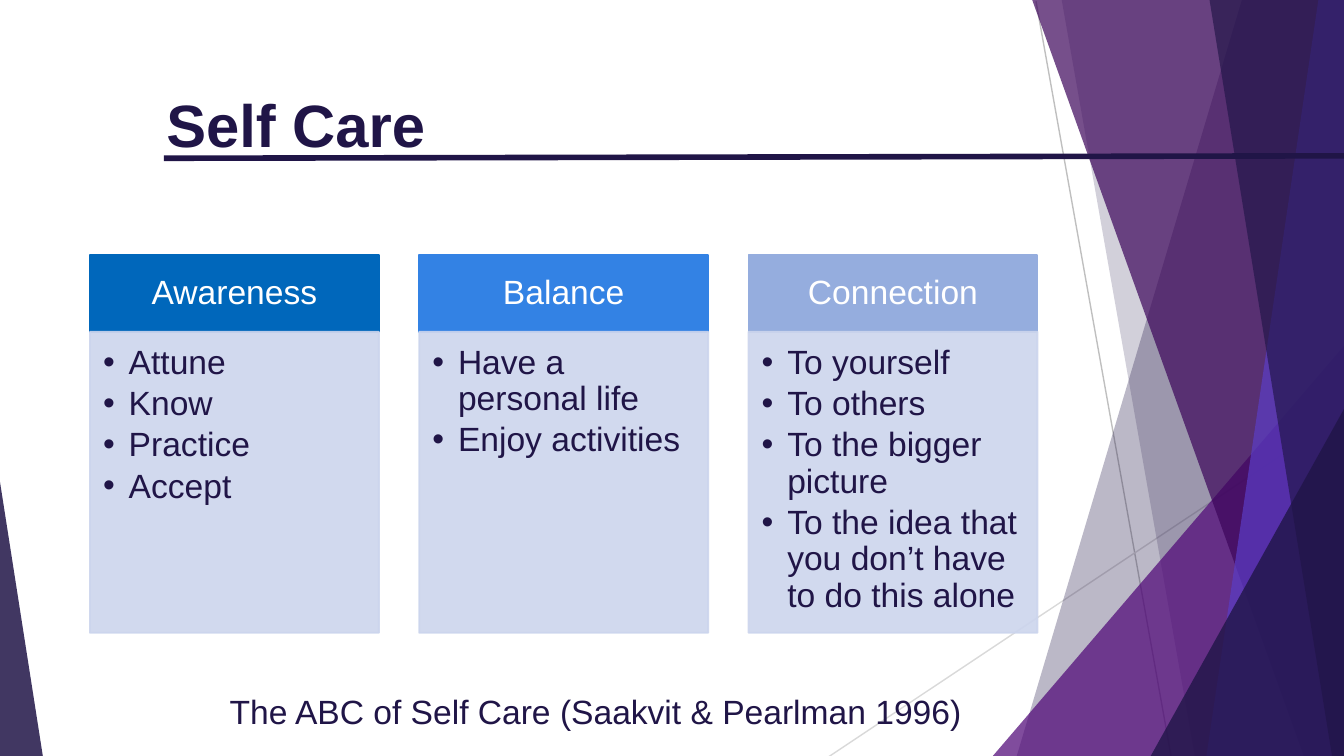
import pptx
import pptx.util
import pptx.dml.color
import pptx.enum.shapes
import pptx.enum.text
import pptx.oxml.ns
from lxml import etree

Pt = pptx.util.Pt
qn = pptx.oxml.ns.qn
SHAPE = pptx.enum.shapes.MSO_SHAPE
ALIGN = pptx.enum.text.PP_ALIGN
ANCHOR = pptx.enum.text.MSO_ANCHOR

NAVY = "201547"
WHITE = "FFFFFF"
PANEL = "CCD5ED"
RIGHT, BOTTOM = 722.9, 408.6  # the facets bleed slightly past the slide edge


def rgb(value):
    return pptx.dml.color.RGBColor.from_string(value)


def write(sp, lines, size=18, color=NAVY, bold=False, align=ALIGN.LEFT,
          anchor=ANCHOR.TOP, insets=(7.2, 3.6, 7.2, 3.6), spacing=None,
          after=0, bullet=False):
    """Fill a shape with one paragraph per line; insets are left, top, right, bottom."""
    tf = sp.text_frame
    tf.word_wrap = True
    tf.vertical_anchor = anchor
    tf.margin_left, tf.margin_top, tf.margin_right, tf.margin_bottom = map(Pt, insets)
    for i, line in enumerate(lines):
        p = tf.paragraphs[0] if i == 0 else tf.add_paragraph()
        p.alignment = align
        p.space_after = Pt(after)
        if spacing:
            p.line_spacing = spacing
        if bullet:
            pPr = p._p.get_or_add_pPr()
            pPr.set("marL", str(Pt(13.7)))
            pPr.set("indent", str(Pt(-13.7)))
            etree.SubElement(pPr, qn("a:buFont")).set("typeface", "Arial")
            etree.SubElement(pPr, qn("a:buChar")).set("char", "•")
        r = p.add_run()
        r.text = line
        r.font.name = "Arial"
        r.font.size = Pt(size)
        r.font.bold = bold
        r.font.color.rgb = rgb(color)


class Deck:
    def __init__(self, width, height):
        self.prs = pptx.Presentation()
        self.prs.slide_width, self.prs.slide_height = Pt(width), Pt(height)
        self.s = self.prs.slides.add_slide(self.prs.slide_layouts[6])

    def paint(self, sp, color, opacity=100, line=False):
        """Apply a solid fill, with an optional matching outline, at one opacity."""
        sp.shadow.inherit = False
        sp.fill.solid()
        sp.fill.fore_color.rgb = rgb(color)
        if line:
            sp.line.color.rgb = rgb(color)
            sp.line.width = Pt(1)
        else:
            sp.line.fill.background()
        if opacity < 100:
            for clr in sp._element.spPr.iter(qn("a:srgbClr")):
                etree.SubElement(clr, qn("a:alpha")).set("val", str(opacity * 1000))
        return sp

    def line(self, x1, y1, x2, y2, color, width):
        c = self.s.shapes.add_connector(
            pptx.enum.shapes.MSO_CONNECTOR.STRAIGHT, Pt(x1), Pt(y1), Pt(x2), Pt(y2))
        c.line.color.rgb = rgb(color)
        c.line.width = Pt(width)
        etree.SubElement(c._element.spPr, qn("a:effectLst"))

    def facet(self, top_x, bottom_x, color, opacity):
        """Full-height panel from a slanted left side to the right edge."""
        fb = self.s.shapes.build_freeform(Pt(top_x), 0)
        corners = [(RIGHT, 0), (RIGHT, BOTTOM), (bottom_x, BOTTOM)]
        fb.add_line_segments([(Pt(x), Pt(y)) for x, y in corners], close=True)
        self.paint(fb.convert_to_shape(), color, opacity)

    def triangle(self, left, top, right, apex, color, opacity):
        """Triangle standing on the bottom edge; apex 0 is left, 1 is right."""
        sp = self.s.shapes.add_shape(
            SHAPE.ISOSCELES_TRIANGLE, Pt(left), Pt(top), Pt(right - left), Pt(BOTTOM - top))
        sp.adjustments[0] = apex
        self.paint(sp, color, opacity)

    def rect(self, x, y, w, h, color, opacity=100):
        sp = self.s.shapes.add_shape(SHAPE.RECTANGLE, Pt(x), Pt(y), Pt(w), Pt(h))
        return self.paint(sp, color, opacity, line=True)

    def text(self, x, y, w, h, content, **style):
        write(self.s.shapes.add_textbox(Pt(x), Pt(y), Pt(w), Pt(h)), [content], **style)

    def card(self, x, title, items, color):
        top, width, head, body = 136.8, 154.8, 41, 161.3
        write(self.rect(x, top, width, head, color), [title], color=WHITE,
              align=ALIGN.CENTER, anchor=ANCHOR.MIDDLE,
              insets=(10, 5.8, 10, 5.8), spacing=0.9)
        write(self.rect(x, top + head, width, body, PANEL, 90), items, bullet=True,
              insets=(7.2, 7.2, 10, 11.5), spacing=0.9, after=2.7)


def main():
    deck = Deck(720, 405)

    deck.line(555, 0.7, 628, BOTTOM, "BFBFBF", 0.75)
    deck.line(RIGHT, 219.6, 439.2, BOTTOM, "D9D9D9", 0.75)
    deck.facet(665.3, 543.6, NAVY, 30)
    deck.facet(568.8, 640.8, NAVY, 20)
    deck.triangle(528.8, 182, RIGHT, 1, "500778", 72)
    deck.facet(553, 699.8, "3C055A", 70)
    deck.facet(706.3, 645.8, "5B3DC6", 70)
    deck.facet(648, 714.2, NAVY, 65)
    deck.triangle(614.5, 214, RIGHT, 1, NAVY, 80)
    deck.triangle(-3, 239, 23.5, 0, NAVY, 85)

    deck.line(87.8, 84.8, 720, 83.5, NAVY, 3)
    deck.text(82, 39.6, 493, 77.8, "Self Care", size=32, bold=True,
              insets=(7.2, 7.2, 7.2, 7.2))

    cards = [
        ("Awareness", "0067BB", ["Attune", "Know", "Practice", "Accept"]),
        ("Balance", "3382E4", ["Have a personal life", "Enjoy activities"]),
        ("Connection", "95ADDE", ["To yourself", "To others", "To the bigger picture",
                                  "To the idea that you don’t have to do this alone"]),
    ]
    for i, (title, color, items) in enumerate(cards):
        deck.card(48.2 + i * 176.4, title, items, color)

    deck.text(116, 366.5, 430.6, 29, "The ABC of Self Care (Saakvit & Pearlman 1996)")
    deck.prs.save("out.pptx")


if __name__ == "__main__":
    main()
